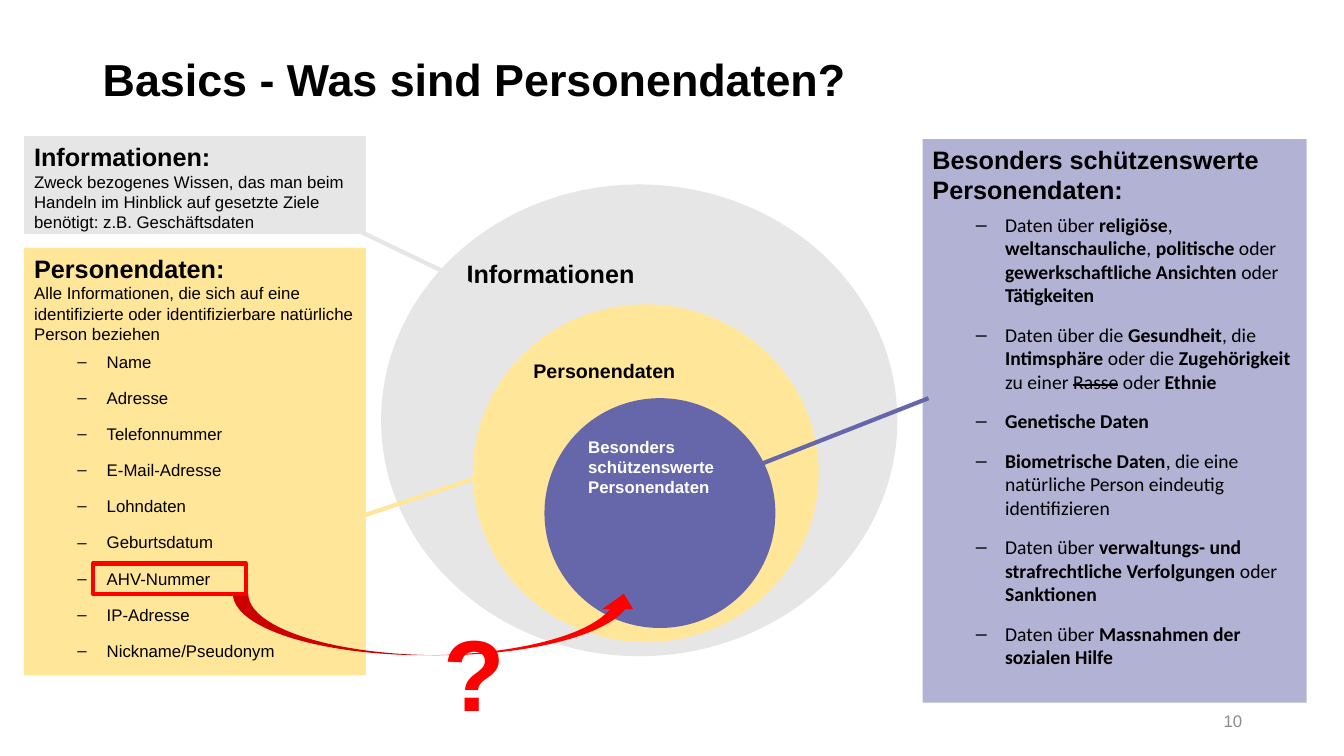
from dataclasses import dataclass

from lxml.etree import SubElement
from pptx import Presentation
from pptx.dml.color import RGBColor
from pptx.enum.shapes import MSO_CONNECTOR, MSO_SHAPE
from pptx.enum.text import MSO_ANCHOR, MSO_AUTO_SIZE, PP_ALIGN
from pptx.oxml.ns import qn
from pptx.util import Inches, Pt


@dataclass(frozen=True)
class Theme:
    black: str = "000000"
    white: str = "FFFFFF"
    grey: str = "E7E6E6"
    yellow: str = "FFE699"
    violet: str = "6667AB"
    red: str = "FF0000"
    muted: str = "8C8C8C"
    font: str = "Arial"
    list_font: str = "Calibri"
    title: int = 32
    heading: int = 18
    label: int = 14
    body: int = 12
    question: int = 72
    stroke: int = 3


@dataclass(frozen=True)
class Box:
    left: float
    top: float
    width: float
    height: float

    def inches(self):
        return [Inches(v) for v in (self.left, self.top, self.width, self.height)]

    def inner(self, left, top, width, height):
        return Box(self.left + left, self.top + top, width, height)


THEME = Theme()

PERSONAL_DATA = [
    "Name", "Adresse", "Telefonnummer", "E-Mail-Adresse", "Lohndaten",
    "Geburtsdatum", "AHV-Nummer", "IP-Adresse", "Nickname/Pseudonym",
]
SENSITIVE_DATA = [
    "Daten über* religiöse*, *weltanschauliche*, *politische* oder "
    "*gewerkschaftliche Ansichten* oder *Tätigkeiten*",
    "Daten über die* Gesundheit*, die *Intimsphäre* oder die "
    "*Zugehörigkeit* zu einer ~Rasse~ oder *Ethnie*",
    "*Genetische Daten*",
    "*Biometrische Daten*, die eine natürliche Person eindeutig identifizieren",
    "Daten über *verwaltungs- und strafrechtliche Verfolgungen* oder *Sanktionen*",
    "Daten über *Massnahmen der sozialen Hilfe*",
]


def write(frame, text, size=THEME.body, color=THEME.black, font=THEME.font,
          bold=False, align=PP_ALIGN.LEFT, spacing=None, bullet=False):
    first = frame.paragraphs[0]
    paragraph = frame.add_paragraph() if first.runs else first
    paragraph.alignment = align
    if spacing:
        paragraph.line_spacing = spacing
    if bullet:
        paragraph.level = 1
        paragraph.space_before = paragraph.space_after = Pt(5.7)
        properties = paragraph._p.get_or_add_pPr()
        properties.set("marL", str(Inches(0.72)))
        properties.set("indent", str(Inches(-0.29)))
        SubElement(properties, qn("a:buFont")).set("typeface", THEME.font)
        SubElement(properties, qn("a:buChar")).set("char", "–")
    for strong, passage in enumerate(text.split("*")):
        for struck, words in enumerate(passage.split("~")):
            if not words:
                continue
            run = paragraph.add_run()
            run.text = words
            run.font.name = font
            run.font.size = Pt(size)
            run.font.bold = bold or strong % 2 == 1
            run.font.color.rgb = RGBColor.from_string(color)
            if struck % 2:
                run._r.get_or_add_rPr().set("strike", "sngStrike")


def add_text_area(slide, box, anchor=MSO_ANCHOR.TOP):
    frame = slide.shapes.add_textbox(*box.inches()).text_frame
    frame.word_wrap = True
    frame.vertical_anchor = anchor
    return frame


def add_area(slide, preset, box, fill=None, outline=None, alpha=None):
    area = slide.shapes.add_shape(preset, *box.inches())
    area.shadow.inherit = False
    if fill:
        area.fill.solid()
        area.fill.fore_color.rgb = RGBColor.from_string(fill)
    else:
        area.fill.background()
    if alpha:
        color = area._element.spPr.find(qn("a:solidFill"))[0]
        SubElement(color, qn("a:alpha")).set("val", str(alpha * 1000))
    if outline:
        area.line.color.rgb = RGBColor.from_string(outline)
        area.line.width = Pt(THEME.stroke)
    else:
        area.line.fill.background()
    area.text_frame.word_wrap = True
    area.text_frame.vertical_anchor = MSO_ANCHOR.TOP
    return area


def add_title(slide, box):
    write(add_text_area(slide, box, MSO_ANCHOR.MIDDLE), "Basics - Was sind Personendaten?",
          size=THEME.title, bold=True, spacing=0.9)


def add_page_number(slide, box):
    write(add_text_area(slide, box, MSO_ANCHOR.MIDDLE), "10",
          color=THEME.muted, align=PP_ALIGN.RIGHT)


def add_nested_circles(slide, box):
    circles = [
        (box, THEME.grey, "Informationen", THEME.heading, THEME.black),
        (box.inner(0.91, 1.19, 3.43, 3.35), THEME.yellow, "Personendaten",
         THEME.label, THEME.black),
        (box.inner(1.62, 2.12, 2.29, 2.28), THEME.violet,
         "Besonders schützenswerte Personendaten", THEME.body, THEME.white),
    ]
    for place, fill, label, size, color in circles:
        circle = add_area(slide, MSO_SHAPE.OVAL, place, fill)
        write(circle.text_frame, label, size=size, color=color, bold=True)


def add_definition(slide, box, fill, heading, explanation=None, examples=(),
                   alpha=None, **example_format):
    panel = add_area(slide, MSO_SHAPE.RECTANGLE, box, fill, alpha=alpha)
    frame = panel.text_frame
    write(frame, heading, size=THEME.heading, bold=True)
    if explanation:
        frame.auto_size = MSO_AUTO_SIZE.SHAPE_TO_FIT_TEXT
        write(frame, explanation)
    for example in examples:
        write(frame, example, bullet=True, **example_format)


def add_links(slide, box):
    links = [
        (0, 3.01, 1.71, 2.44, THEME.yellow),
        (0, 0, 1.52, 0.73, THEME.grey),
        (4.13, 2.44, 5.86, 1.76, THEME.violet),
    ]
    for x1, y1, x2, y2, color in links:
        link = slide.shapes.add_connector(
            MSO_CONNECTOR.STRAIGHT, Inches(box.left + x1), Inches(box.top + y1),
            Inches(box.left + x2), Inches(box.top + y2))
        link.line.color.rgb = RGBColor.from_string(color)
        link.line.width = Pt(THEME.stroke)
        SubElement(link._element.spPr, qn("a:effectLst"))


def add_question(slide, box):
    arrow = add_area(slide, MSO_SHAPE.CURVED_LEFT_ARROW,
                     box.inner(3.1, -1.41, 0.61, 4.03), THEME.red)
    arrow.rotation = 270
    arrow._element.spPr.find(qn("a:xfrm")).set("flipH", "1")
    add_area(slide, MSO_SHAPE.RECTANGLE, box.inner(0, 0, 1.52, 0.3), outline=THEME.red)
    write(add_text_area(slide, box.inner(3.38, 0.42, 0.79, 1.3)), "?",
          size=THEME.question, color=THEME.red, bold=True)


def main():
    presentation = Presentation()
    presentation.slide_width = Inches(13.33)
    presentation.slide_height = Inches(7.5)
    slide = presentation.slides.add_slide(presentation.slide_layouts[6])

    add_title(slide, Box(0.92, 0.09, 11.5, 1.45))
    add_page_number(slide, Box(9.42, 6.95, 3, 0.4))
    add_nested_circles(slide, Box(3.78, 1.83, 5.12, 4.68))
    add_definition(slide, Box(0.24, 1.35, 3.39, 0.97), THEME.grey, "Informationen:",
                   "Zweck bezogenes Wissen, das man beim Handeln im Hinblick auf "
                   "gesetzte Ziele benötigt: z.B. Geschäftsdaten")
    add_definition(slide, Box(0.24, 2.46, 3.39, 4.24), THEME.yellow, "Personendaten:",
                   "Alle Informationen, die sich auf eine identifizierte oder "
                   "identifizierbare natürliche Person beziehen", PERSONAL_DATA)
    add_definition(slide, Box(9.15, 1.38, 3.81, 5.59), THEME.violet,
                   "Besonders schützenswerte Personendaten:", examples=SENSITIVE_DATA,
                   alpha=50, size=THEME.label, font=THEME.list_font)
    add_links(slide, Box(3.35, 2.19, 5.86, 3.01))
    add_question(slide, Box(0.92, 5.59, 5.42, 1.72))
    presentation.save("out.pptx")


if __name__ == "__main__":
    main()
